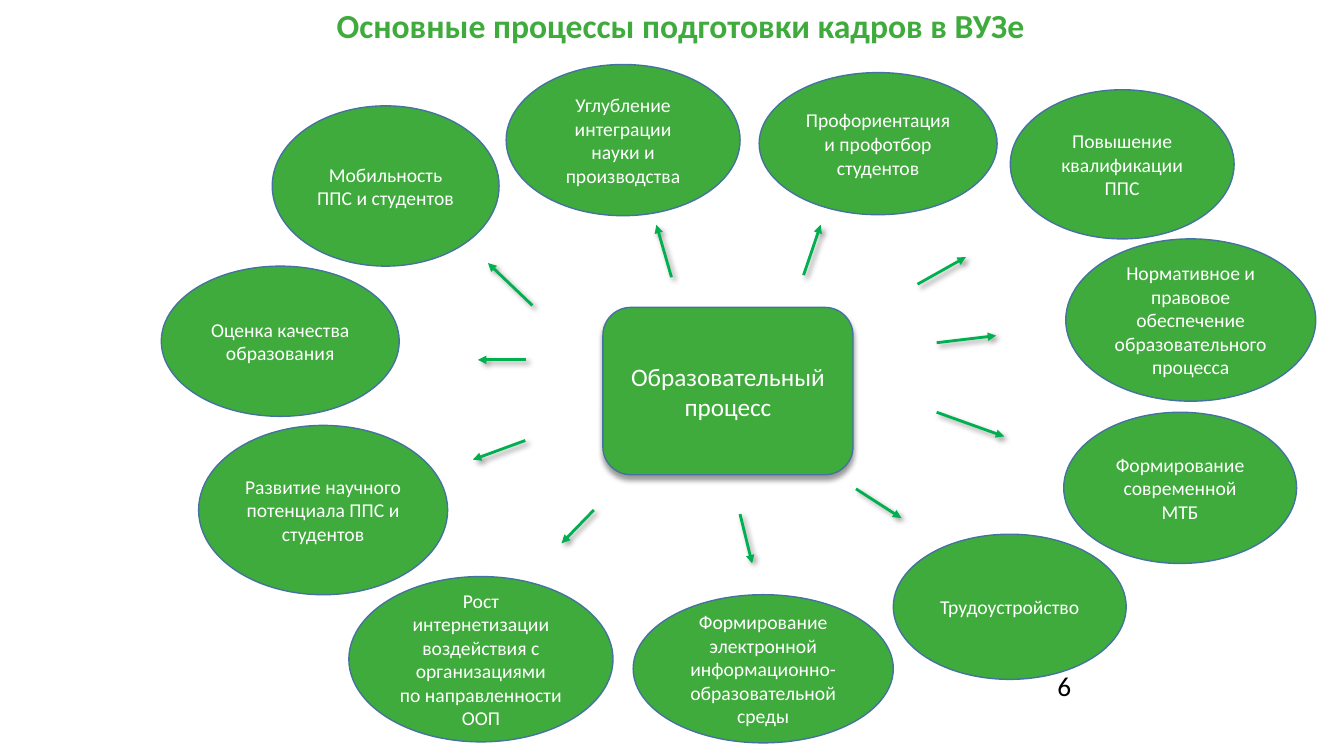
"""Build a slide showing the processes that surround the educational process."""
from typing import NamedTuple

from lxml import etree
from pptx import Presentation, util as u
from pptx.dml.color import RGBColor
from pptx.enum import shapes, text
from pptx.oxml.ns import qn

FONT = "Calibri"
GREEN, OUTLINE, ARROW = "3FAB3C", "43739E", "00B050"
WHITE, BLACK = "FFFFFF", "000000"


class Node(NamedTuple):
    left: float
    top: float
    width: float
    height: float
    lines: tuple[str, ...]


class Arrow(NamedTuple):
    x1: float
    y1: float
    x2: float
    y2: float


CORE = Node(5.98, 3.05, 2.48, 1.66, ("Образовательный процесс",))

PROCESSES = [
    Node(2.7, 1.05, 2.25, 1.59, ("Мобильность ППС и студентов",)),
    Node(5.02, 0.64, 2.32, 1.5, ("Углубление интеграции", "науки и производства")),
    Node(7.53, 0.72, 2.36, 1.41, ("Профориентация и профотбор", "студентов")),
    Node(1.97, 4.22, 2.47, 1.68, ("Развитие научного потенциала ППС и студентов",)),
    Node(10.02, 0.89, 2.22, 1.48, ("Повышение квалификации", "ППС")),
    Node(3.46, 5.72, 2.62, 1.64,
         ("Рост интернетизации воздействия с организациями", "по направленности ООП")),
    Node(6.28, 5.9, 2.58, 1.47,
         ("Формирование электронной информационно-образовательной", "среды")),
    Node(10.57, 2.37, 2.48, 1.61,
         ("Нормативное и правовое обеспечение образовательного", "процесса")),
    Node(1.6, 2.64, 2.36, 1.49, ("Оценка качества образования",)),
    Node(10.55, 4.09, 2.31, 1.5, ("Формирование современной МТБ",)),
    Node(8.86, 5.3, 2.31, 1.44, ("Трудоустройство",)),
]

ARROWS = [
    Arrow(6.66, 2.75, 6.51, 2.23),
    Arrow(7.97, 2.73, 8.14, 2.23),
    Arrow(9.1, 2.82, 9.58, 2.55),
    Arrow(8.49, 4.85, 8.94, 5.14),
    Arrow(9.29, 4.09, 9.96, 4.33),
    Arrow(9.29, 3.4, 9.88, 3.33),
    Arrow(7.34, 5.1, 7.46, 5.59),
    Arrow(5.89, 5.06, 5.57, 5.39),
    Arrow(5.21, 4.37, 4.69, 4.56),
    Arrow(5.22, 3.57, 4.74, 3.57),
    Arrow(5.28, 3.03, 4.84, 2.61),
]


def paint(color, value: str) -> None:
    """Set a font colour or a solid fill's foreground from a hex string."""
    color.rgb = RGBColor.from_string(value)


def write(tf, lines: tuple[str, ...], size: float, color: str,
          align=text.PP_ALIGN.CENTER, bold: bool = False) -> None:
    """Fill a text frame with one paragraph per line."""
    tf.word_wrap = True
    for i, line in enumerate(lines):
        p = tf.paragraphs[0] if i == 0 else tf.add_paragraph()
        p.text = line
        p.alignment = align
        p.font.name, p.font.size, p.font.bold = FONT, u.Pt(size), bold
        paint(p.font.color, color)


def add_shadow(sp_pr, degrees: int) -> None:
    """Give shape properties a soft black outer shadow."""
    effects = sp_pr.find(qn("a:effectLst"))
    if effects is None:
        effects = etree.SubElement(sp_pr, qn("a:effectLst"))
    shadow = etree.SubElement(effects, qn("a:outerShdw"), blurRad=str(u.Pt(4)),
                              dist=str(u.Pt(3)), dir=str(degrees * 60000), rotWithShape="0")
    color = etree.SubElement(shadow, qn("a:srgbClr"), val=BLACK)
    etree.SubElement(color, qn("a:alpha"), val="40000")


def add_node(s, node: Node, kind, size: float):
    """Draw a green shape with centred white text."""
    sp = s.shapes.add_shape(kind, u.Inches(node.left), u.Inches(node.top),
                            u.Inches(node.width), u.Inches(node.height))
    sp.shadow.inherit = False
    sp.fill.solid()
    paint(sp.fill.fore_color, GREEN)
    paint(sp.line.color, OUTLINE)
    sp.line.width = u.Pt(1)
    sp.text_frame.vertical_anchor = text.MSO_ANCHOR.MIDDLE
    write(sp.text_frame, node.lines, size, WHITE)
    return sp


def add_arrow(s, arrow: Arrow) -> None:
    """Draw a shadowed arrow pointing at its second end."""
    line = s.shapes.add_connector(shapes.MSO_CONNECTOR.STRAIGHT,
                                  *(u.Inches(v) for v in arrow))
    paint(line.line.color, ARROW)
    line.line.width = u.Pt(2)
    etree.SubElement(line.line._get_or_add_ln(), qn("a:tailEnd"), type="triangle")
    add_shadow(line._element.spPr, 45)


def main() -> None:
    """Build and save the slide."""
    prs = Presentation()
    prs.slide_width, prs.slide_height = u.Inches(13.33), u.Inches(7.5)
    s = prs.slides.add_slide(prs.slide_layouts[5])

    title = s.shapes.title
    title.left, title.top = u.Inches(2.25), u.Inches(0.07)
    title.width, title.height = u.Inches(9), u.Inches(0.41)
    title.text_frame.auto_size = text.MSO_AUTO_SIZE.NONE
    title.text_frame.vertical_anchor = text.MSO_ANCHOR.MIDDLE
    write(title.text_frame, ("Основные процессы подготовки кадров в ВУЗе",),
          24, GREEN, bold=True)
    title.text_frame.paragraphs[0].line_spacing = 0.9

    core = add_node(s, CORE, shapes.MSO_SHAPE.ROUNDED_RECTANGLE, 18)
    add_shadow(core._element.spPr, 90)
    for node in PROCESSES:
        add_node(s, node, shapes.MSO_SHAPE.OVAL, 14)
    for arrow in ARROWS:
        add_arrow(s, arrow)

    number = s.shapes.add_textbox(u.Inches(10.39), u.Inches(6.59),
                                  u.Inches(0.37), u.Inches(0.43))
    write(number.text_frame, ("6",), 19.5, BLACK, text.PP_ALIGN.LEFT)

    prs.save("out.pptx")


if __name__ == "__main__":
    main()
